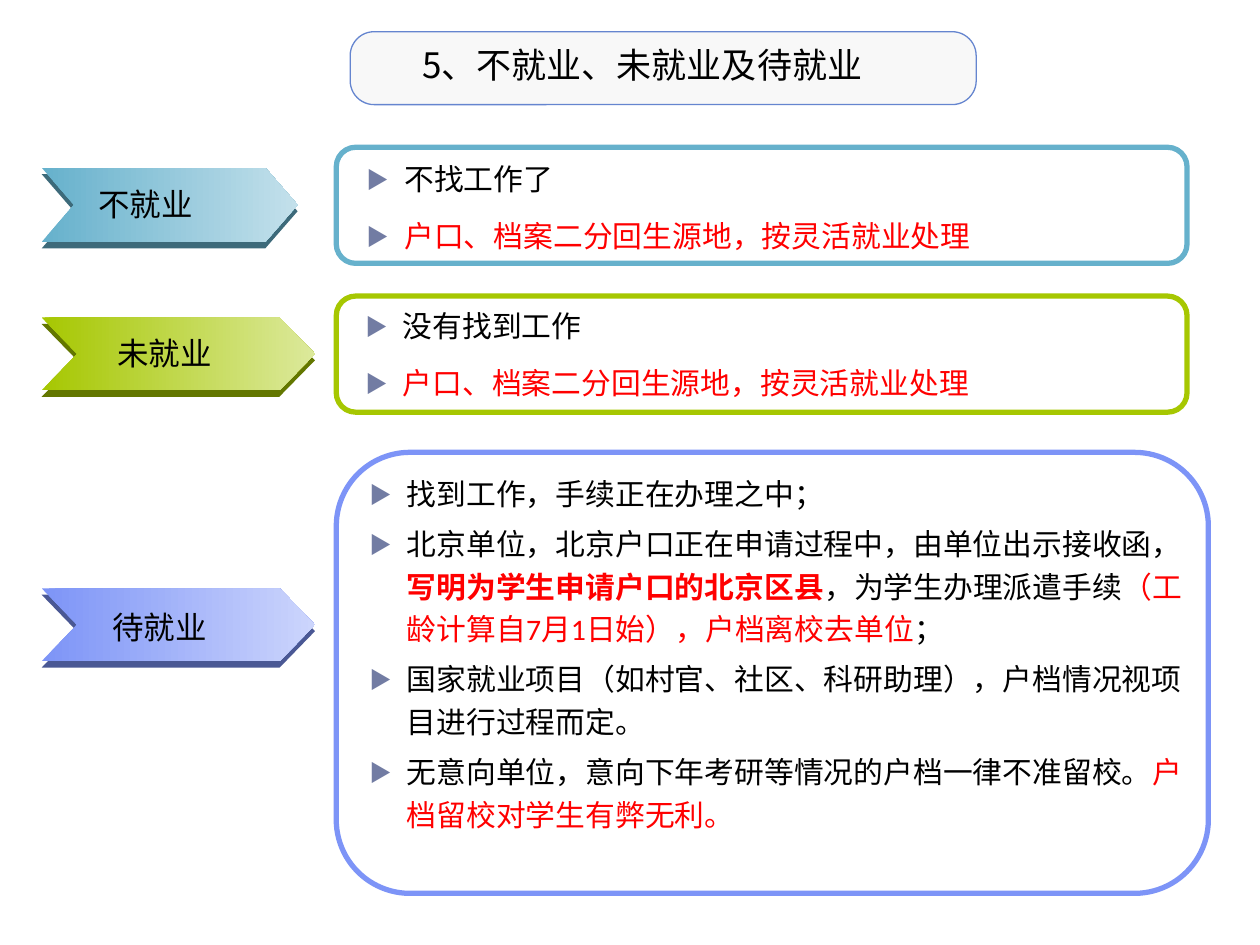
from dataclasses import dataclass

from lxml.etree import SubElement
from pptx import Presentation
from pptx.dml.color import RGBColor
from pptx.enum.shapes import MSO_SHAPE
from pptx.enum.text import MSO_ANCHOR
from pptx.oxml.ns import qn
from pptx.util import Cm, Pt


@dataclass(frozen=True)
class Theme:
    """Colours, fonts and type sizes of the slide."""
    ink: str = "000000"
    red: str = "FF0000"
    mark: str = "727CA3"
    panel: str = "F8F8F8"
    edge: str = "6585CF"
    blue: tuple = ("66B1CC", "C3E0EB", "3D6A7A")
    green: tuple = ("A6C701", "DCE99B", "637700")
    violet: tuple = ("7D94F7", "CCD5FC", "4A5894")
    cjk: str = "Noto Sans CJK SC"
    sans: str = "Arial"
    body: str = "Calibri"
    head: int = 20
    label: int = 18
    text: int = 17


def rgb(code):
    """Turn a hex code into a colour."""
    return RGBColor.from_string(code)


def area(box):
    """Turn centimetres into lengths."""
    return [Cm(n) for n in box]


class Board:
    """Draws styled elements on one slide."""

    def __init__(self, slide, theme):
        """Keep the slide and its theme."""
        self.slide = slide
        self.theme = theme

    def shape(self, kind, box, adj):
        """Add a flat preset shape without a shadow."""
        shape = self.slide.shapes.add_shape(kind, *area(box))
        shape.adjustments[0] = adj
        shape.shadow.inherit = False
        return shape

    def frame(self, box, edge, width=3, adj=0.167, fill=None):
        """Add an outlined rounded rectangle."""
        shape = self.shape(MSO_SHAPE.ROUNDED_RECTANGLE, box, adj)
        shape.line.color.rgb = rgb(edge)
        shape.line.width = Pt(width)
        if fill:
            shape.fill.solid()
            shape.fill.fore_color.rgb = rgb(fill)
        else:
            shape.fill.background()

    def arrow(self, box, tint, adj):
        """Add a gradient chevron above its darker lower edge."""
        left, top, wide, high = box
        base = self.shape(MSO_SHAPE.CHEVRON, (left, top + 0.13, wide, high), adj)
        base.fill.solid()
        base.fill.fore_color.rgb = rgb(tint[2])
        face = self.shape(MSO_SHAPE.CHEVRON, box, adj)
        face.fill.gradient()
        face.fill.gradient_angle = 0
        for stop, code in zip(face.fill.gradient_stops, tint):
            stop.color.rgb = rgb(code)
        for part in (base, face):
            part.line.fill.background()

    def font(self, para, name, size):
        """Set the font of a whole paragraph."""
        para.font.name = name
        para.font.size = Pt(size)
        para.font.color.rgb = rgb(self.theme.ink)

    def line(self, box, text, name, size, wrap=True):
        """Add a text box with a single line."""
        frame = self.slide.shapes.add_textbox(*area(box)).text_frame
        frame.word_wrap = wrap
        frame.vertical_anchor = MSO_ANCHOR.MIDDLE
        para = frame.paragraphs[0]
        para.text = text
        self.font(para, name, size)

    def bullet(self, para):
        """Give a paragraph a hanging triangle."""
        props = para._p.get_or_add_pPr()
        props.set("marL", str(Cm(0.76)))
        props.set("indent", str(-Cm(0.76)))
        tone = SubElement(props, qn("a:buClr"))
        SubElement(tone, qn("a:srgbClr"), val=self.theme.mark)
        SubElement(props, qn("a:buSzPct"), val="76000")
        SubElement(props, qn("a:buFont"), typeface=self.theme.cjk)
        SubElement(props, qn("a:buChar"), char="▶")

    def points(self, box, items, pitch, gap):
        """Add a bulleted list whose runs may be red or bold."""
        frame = self.slide.shapes.add_textbox(*area(box)).text_frame
        frame.word_wrap = True
        for i, item in enumerate(items):
            para = frame.add_paragraph() if i else frame.paragraphs[0]
            self.bullet(para)
            para.line_spacing = pitch
            para.space_before = Pt(gap if i else 0)
            self.font(para, self.theme.body, self.theme.text)
            for text, style in item:
                run = para.add_run()
                run.text = text
                if "red" in style:
                    run.font.color.rgb = rgb(self.theme.red)
                if "bold" in style:
                    run.font.bold = True


def main():
    """Build the slide and save it."""
    deck = Presentation()
    deck.slide_width, deck.slide_height = Cm(25.4), Cm(19.05)
    theme = Theme()
    board = Board(deck.slides.add_slide(deck.slide_layouts[6]), theme)

    board.frame((7.06, 0.64, 12.62, 1.47), theme.edge, 0.75, 0.328, theme.panel)
    board.line((8.26, 0.76, 11.63, 1.09), "5、不就业、未就业及待就业",
               theme.cjk, theme.head)

    rule = [("户口、档案二分回生源地，按灵活就业处理", "red")]
    wait = [
        [("找到工作，手续正在办理之中；", "")],
        [("北京单位，北京户口正在申请过程中，由单位出示接收函，", ""),
         ("写明为学生申请户口的北京区县", "red bold"),
         ("，为学生办理派遣手续", ""),
         ("（工龄计算自7月1日始），户档离校去单位", "red"),
         ("；", "")],
        [("国家就业项目（如村官、社区、科研助理），户档情况视项目进行过程而定。", "")],
        [("无意向单位，意向下年考研等情况的户档一律不准留校。", ""),
         ("户档留校对学生有弊无利。", "red")],
    ]
    rows = [
        ("不就业", theme.blue, (0.84, 3.38, 5.16, 1.5), 0.435, (1.73, 3.61),
         (6.78, 2.97, 17.15, 2.34), (7.14, 2.9, 15.29, 2.49),
         [[("不找工作了", "")], rule], 1.3, 6),
        ("未就业", theme.green, (0.84, 6.4, 5.51, 1.47), 0.489, (2.11, 6.6),
         (6.78, 5.97, 17.15, 2.34), (7.11, 5.87, 13.54, 2.74),
         [[("没有找到工作", "")], rule], 1.3, 6),
        ("待就业", theme.violet, (0.84, 11.86, 5.51, 1.47), 0.485, (2.01, 12.12),
         (6.78, 9.12, 17.58, 8.89), (7.19, 9.32, 17.15, 8.46),
         wait, 1.2, 4),
    ]
    for name, tint, tag, adj, spot, edge, box, items, pitch, gap in rows:
        board.arrow(tag, tint, adj)
        board.line((*spot, 2.41, 1.02), name, theme.sans, theme.label, False)
        board.frame(edge, tint[0])
        board.points(box, items, pitch, gap)

    deck.save("out.pptx")


if __name__ == "__main__":
    main()
